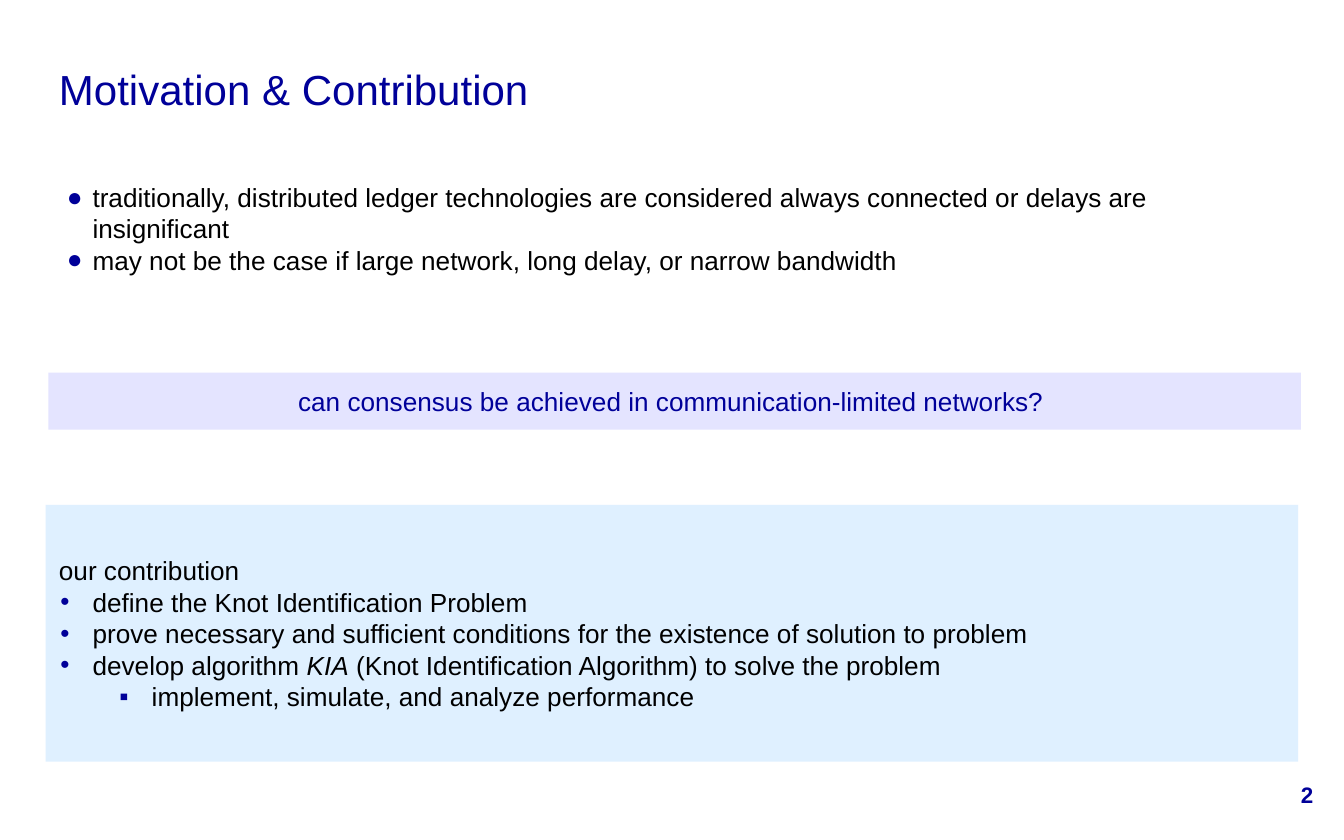
from dataclasses import dataclass

from lxml import etree
from pptx import Presentation
from pptx.dml.color import RGBColor
from pptx.enum import shapes, text
from pptx.oxml import ns
from pptx.util import Pt


@dataclass(frozen=True)
class Theme:
    font: str = "Arial"
    navy: str = "000099"
    black: str = "000000"
    lavender: str = "E4E4FF"
    sky: str = "CBE7FF"
    title: float = 22.5
    body: float = 14
    number: float = 12


THEME = Theme()
ALIGN = text.PP_ALIGN

# Content: each paragraph is (level style, text); *stars* mark italics
TITLE = [("plain", "Motivation & Contribution")]
MOTIVATION = [
    ("dot", "traditionally, distributed ledger technologies are considered "
            "always connected or delays are insignificant"),
    ("dot", "may not be the case if large network, long delay, or narrow bandwidth"),
]
QUESTION = [("plain", "can consensus be achieved in communication-limited networks? ")]
CONTRIBUTION = [
    ("plain", "our contribution"),
    ("point", "define the Knot Identification Problem"),
    ("point", "prove necessary and sufficient conditions for the existence "
              "of solution to problem"),
    ("point", "develop algorithm *KIA* (Knot Identification Algorithm) to solve the problem"),
    ("subpoint", "implement, simulate, and analyze performance"),
]
PAGE_NUMBER = [("plain", "2")]

# Bullet styles: character, level, left margin, hanging indent
BULLETS = {
    "dot": ("●", 0, 18, -13.7),
    "point": ("•", 0, 18, -17.3),
    "subpoint": ("▪", 1, 49.7, -17.3),
}

LEFT, WIDTH, INSET = 24.5, 671, 7.2


def add_bullet(paragraph, style):
    mark, level, margin, indent = BULLETS[style]
    paragraph.level = level
    props = paragraph._p.get_or_add_pPr()
    props.set("marL", str(Pt(margin)))
    props.set("indent", str(Pt(indent)))
    color = etree.SubElement(props, ns.qn("a:buClr"))
    etree.SubElement(color, ns.qn("a:srgbClr"), val=THEME.navy)
    etree.SubElement(props, ns.qn("a:buFont"), typeface=THEME.font)
    etree.SubElement(props, ns.qn("a:buChar"), char=mark)


def write(box, content, size, color, align=ALIGN.LEFT, anchor="MIDDLE", bold=False):
    frame = box.text_frame
    frame.word_wrap = True
    frame.vertical_anchor = text.MSO_ANCHOR[anchor]
    frame.margin_left = frame.margin_right = Pt(INSET)
    frame.margin_top = frame.margin_bottom = Pt(INSET)
    for index, (style, words) in enumerate(content):
        paragraph = frame.add_paragraph() if index else frame.paragraphs[0]
        paragraph.alignment = align
        if style in BULLETS:
            add_bullet(paragraph, style)
        for part, piece in enumerate(words.split("*")):
            run = paragraph.add_run()
            run.text = piece
            run.font.name, run.font.size = THEME.font, Pt(size)
            run.font.bold, run.font.italic = bold, part % 2 == 1
            run.font.color.rgb = RGBColor.from_string(color)


def add_panel(slide, left, top, height, color, opacity=100):
    panel = slide.shapes.add_shape(
        shapes.MSO_SHAPE.RECTANGLE, Pt(left), Pt(top), Pt(WIDTH), Pt(height))
    panel.shadow.inherit = False
    panel.line.fill.background()
    panel.fill.solid()
    panel.fill.fore_color.rgb = RGBColor.from_string(color)
    if opacity < 100:
        fill_color = panel._element.spPr.find(".//" + ns.qn("a:srgbClr"))
        etree.SubElement(fill_color, ns.qn("a:alpha"), val=str(opacity * 1000))
    return panel


def add_text(slide, left, top, width, height):
    return slide.shapes.add_textbox(Pt(left), Pt(top), Pt(width), Pt(height))


def main():
    deck = Presentation()
    deck.slide_width, deck.slide_height = Pt(720), Pt(450)
    slide = deck.slides.add_slide(deck.slide_layouts[6])

    # Contribution panel
    contribution = add_panel(slide, LEFT, 270.5, 137.5, THEME.sky, opacity=60)
    write(contribution, CONTRIBUTION, THEME.body, THEME.black)

    # Motivation and title
    motivation = add_text(slide, LEFT, 90, WIDTH, 80.6)
    write(motivation, MOTIVATION, THEME.body, THEME.black, anchor="TOP")
    title = add_text(slide, LEFT, 22.3, WIDTH, 50.4)
    write(title, TITLE, THEME.title, THEME.navy)

    # Page number
    page_number = add_text(slide, 667.4, 408.2, 43.2, 34.6)
    write(page_number, PAGE_NUMBER, THEME.number, THEME.navy, ALIGN.RIGHT, bold=True)

    # Central question
    question = add_panel(slide, 25.9, 199.7, 30.5, THEME.lavender)
    write(question, QUESTION, THEME.body, THEME.navy, ALIGN.CENTER)

    deck.save("out.pptx")


if __name__ == "__main__":
    main()
